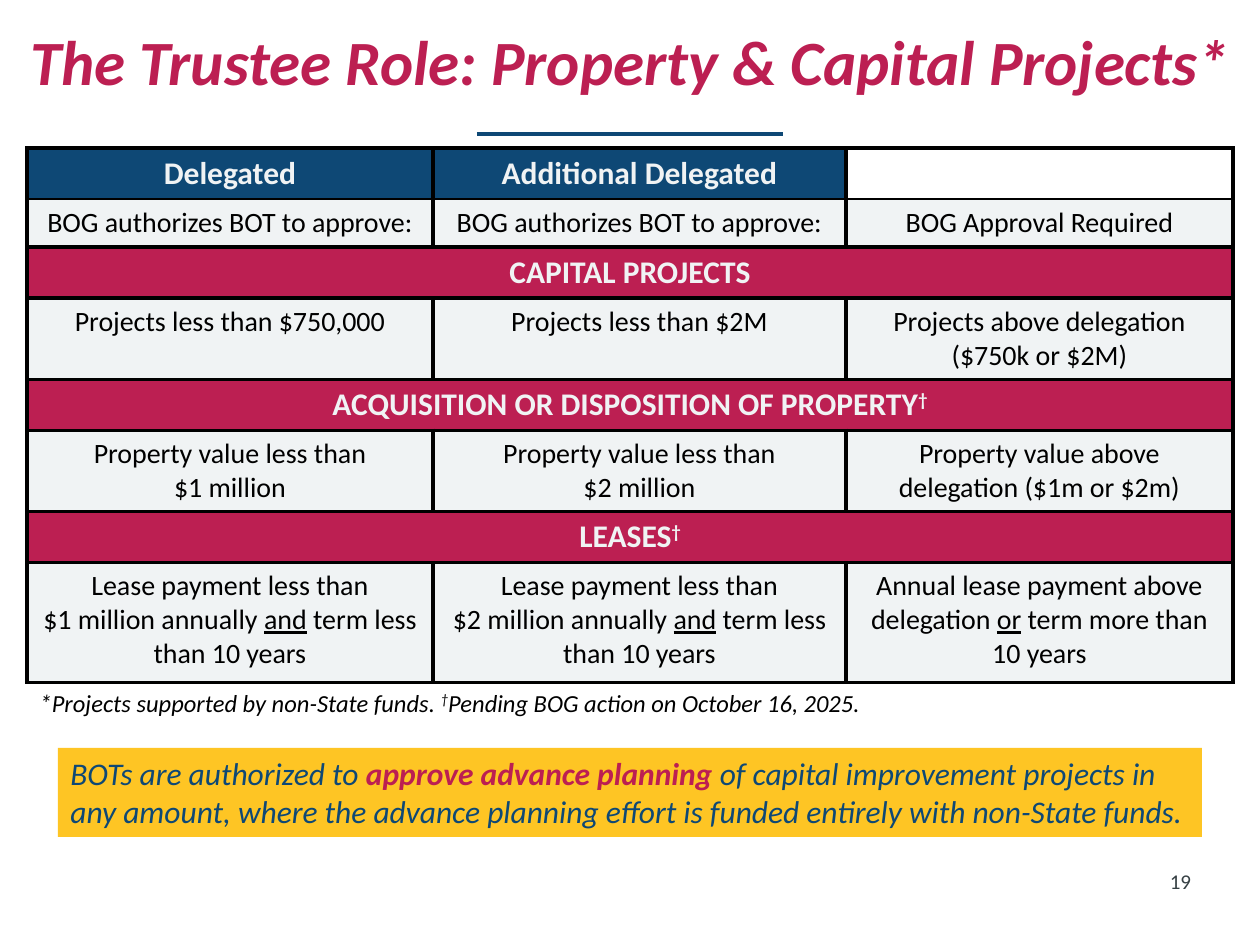
import pptx
import pptx.util
import pptx.dml.color
import pptx.enum.shapes
import pptx.enum.text
import pptx.oxml
import pptx.oxml.ns

SCALE = 914400 / 126
COLORS = {"navy": "0E4875", "crimson": "BC1F52", "gold": "FEC524",
          "pale": "F0F3F4", "black": "000000", "slate": "364044"}
ALIGN = pptx.enum.text.PP_ALIGN
RAISED = {"raised": True}
UNDERLINED = {"underline": True}

COLUMN_WIDTHS = (406, 413, 387)
ROW_HEIGHTS = {"header": 45, "banner": 48, "subhead": 48, "short": 74,
               "long": 120, "note": 48}
ROWS = [
    ("header", ["Delegated", "Additional Delegated", ""]),
    ("subhead", ["BOG authorizes BOT to approve:"] * 2 + ["BOG Approval Required"]),
    ("banner", ["CAPITAL PROJECTS"]),
    ("short", ["Projects less than $750,000", "Projects less than $2M",
               "Projects above delegation ($750k or $2M)"]),
    ("banner", [[["ACQUISITION OR DISPOSITION OF PROPERTY", ("†", RAISED)]]]),
    ("short", [["Property value less than", f"${limit} million"] for limit in (1, 2)]
     + ["Property value above delegation ($1m or $2m)"]),
    ("banner", [[["LEASES", ("†", RAISED)]]]),
    ("long", [["Lease payment less than",
               [f"${limit} million annually ", ("and", UNDERLINED),
                " term less than 10 years"]] for limit in (1, 2)]
     + [[["Annual lease payment above delegation ", ("or", UNDERLINED),
          " term more than 10 years"]]]),
    ("note", [[["*Projects supported by non-State funds. ", ("†", RAISED),
                "Pending BOG action on October 16, 2025."]]]),
]
BODY_STYLE = {"size": 16, "color": "black", "align": ALIGN.CENTER}
HEAD_STYLE = {"size": 18, "color": "pale", "bold": True, "align": ALIGN.CENTER}
ROW_STYLES = {
    "header": ("navy", HEAD_STYLE),
    "banner": ("crimson", HEAD_STYLE),
    "note": (None, {"size": 14, "color": "black", "italic": True}),
}


def px(length):
    """Turn px into EMU."""
    return pptx.util.Emu(round(length * SCALE))


def rgb(name):
    """Look up a named colour."""
    return pptx.dml.color.RGBColor.from_string(COLORS[name])


def write(frame, text, align=ALIGN.LEFT, **style):
    """Fill a text frame from a string or a list of paragraphs made of spans."""
    for index, line in enumerate([text] if isinstance(text, str) else text):
        para = frame.add_paragraph() if index else frame.paragraphs[0]
        para.alignment = align
        for part in [line] if isinstance(line, str) else line:
            words, extra = (part, {}) if isinstance(part, str) else part
            look = {**style, **extra}
            span = para.add_run()
            span.text = words
            span.font.name = "Calibri"
            span.font.size = pptx.util.Pt(look["size"])
            span.font.color.rgb = rgb(look["color"])
            span.font.bold = look.get("bold", False)
            span.font.italic = look.get("italic", False)
            span.font.underline = look.get("underline", False)
            if look.get("raised"):
                span.font._element.set("baseline", "30000")


def set_borders(cell, **widths):
    """Set the cell edges L, R, T and B to widths in points, zero for none."""
    properties = cell._tc.get_or_add_tcPr()
    for side in "LRTB":
        width = widths[side]
        paint = (f'<a:solidFill><a:srgbClr val="{COLORS["black"]}"/></a:solidFill>'
                 if width else "<a:noFill/>")
        properties.append(pptx.oxml.parse_xml(
            f'<a:ln{side} {pptx.oxml.ns.nsdecls("a")} '
            f'w="{pptx.util.Pt(width)}">{paint}</a:ln{side}>'))


def add_title(page, left, top, width, height):
    """Place the slide title and the short rule below it."""
    title = page.shapes.title
    title.left, title.top, title.width, title.height = map(px, (left, top, width, height))
    frame = title.text_frame
    frame.word_wrap = True
    frame.auto_size = pptx.enum.text.MSO_AUTO_SIZE.NONE
    frame.vertical_anchor = pptx.enum.text.MSO_ANCHOR.MIDDLE
    write(frame, "The Trustee Role: Property & Capital Projects*",
          size=36, color="crimson", bold=True, italic=True, align=ALIGN.CENTER)
    frame.paragraphs[0].line_spacing = 0.9
    middle, rule_top = left + width / 2, top + height + 8
    rule = page.shapes.add_connector(
        pptx.enum.shapes.MSO_CONNECTOR.STRAIGHT,
        px(middle - 153), px(rule_top), px(middle + 153), px(rule_top))
    rule.line.color.rgb = rgb("navy")
    rule.line.width = pptx.util.Pt(2)
    rule._element.spPr.append(pptx.oxml.parse_xml(
        f'<a:effectLst {pptx.oxml.ns.nsdecls("a")}/>'))


def add_authority_table(page, left, top):
    """Place the table of approval limits."""
    heights = [ROW_HEIGHTS[kind] for kind, _ in ROWS]
    table = page.shapes.add_table(
        len(ROWS), len(COLUMN_WIDTHS), px(left), px(top),
        px(sum(COLUMN_WIDTHS)), px(sum(heights))).table
    table.first_row = table.horz_banding = False
    for column, width in zip(table.columns, COLUMN_WIDTHS):
        column.width = px(width)
    for index, (kind, texts) in enumerate(ROWS):
        table.rows[index].height = px(heights[index])
        cells = list(table.rows[index].cells)
        fill, style = ROW_STYLES.get(kind, ("pale", BODY_STYLE))
        side = 0 if kind == "note" else 2.25
        for cell in cells:
            set_borders(cell, L=side, R=side, T=1 if kind == "subhead" else 2.25,
                        B=1 if kind == "header" else side)
        if len(texts) == 1:
            cells[0].merge(cells[-1])
        for cell, text in zip(cells, texts):
            if fill and text:
                cell.fill.solid()
                cell.fill.fore_color.rgb = rgb(fill)
            else:
                cell.fill.background()
            if text:
                write(cell.text_frame, text, **style)


def add_callout(page, left, top, width, height):
    """Place the highlighted statement on advance planning."""
    callout = page.shapes.add_shape(
        pptx.enum.shapes.MSO_SHAPE.RECTANGLE, *map(px, (left, top, width, height)))
    callout.shadow.inherit = False
    callout.fill.solid()
    callout.fill.fore_color.rgb = rgb("gold")
    callout.line.fill.background()
    callout.text_frame.word_wrap = True
    callout.text_frame.vertical_anchor = pptx.enum.text.MSO_ANCHOR.TOP
    write(callout.text_frame, [[
        "BOTs are authorized to ",
        ("approve advance planning ", {"color": "crimson", "bold": True}),
        "of capital improvement projects in any amount, where the advance "
        "planning effort is funded entirely with non-State funds."]],
        size=18, color="navy", italic=True)


def add_page_number(page, left, top, width, height):
    """Place the page number."""
    box = page.shapes.add_textbox(*map(px, (left, top, width, height)))
    frame = box.text_frame
    frame.margin_left = frame.margin_right = frame.margin_top = frame.margin_bottom = 0
    frame.word_wrap = True
    write(frame, "19", size=12, color="slate", align=ALIGN.RIGHT)


def main():
    """Build and save the deck."""
    deck = pptx.Presentation()
    deck.slide_width, deck.slide_height = px(1260), px(945)
    page = deck.slides.add_slide(deck.slide_layouts.get_by_name("Title Only"))
    add_title(page, 0, 5, 1260, 121)
    add_authority_table(page, 27, 148)
    add_callout(page, 58, 748, 1144, 89)
    add_page_number(page, 1134, 869, 57, 28)
    deck.save("out.pptx")


if __name__ == "__main__":
    main()
